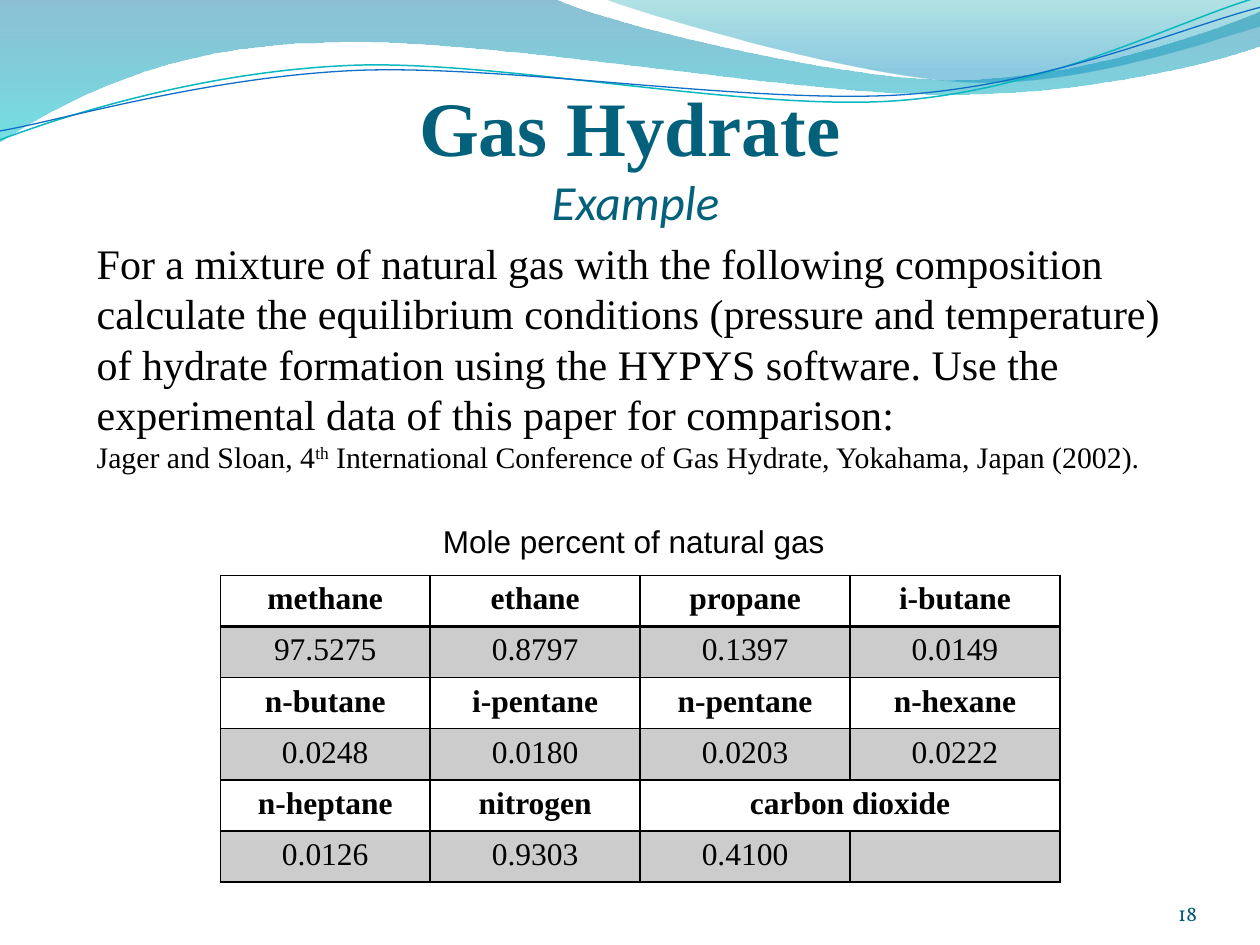
from collections import namedtuple
from itertools import product

from lxml.etree import SubElement
from pptx import Presentation
from pptx.dml.color import RGBColor
from pptx.enum.text import MSO_ANCHOR, MSO_AUTO_SIZE, PP_ALIGN
from pptx.oxml.ns import qn
from pptx.util import Cm, Pt

COLORS = {
    "black": "000000", "title": "04617B", "number": "045D75",
    "deep_blue": "0074A1", "aqua": "00C6CF", "teal": "00A1A9", "sky": "008BBF",
    "teal_line": "0AB8BF", "blue_line": "0F6FC6",
}
SERIF = "Times New Roman"
Box = namedtuple("Box", "left top width height")

# Outlines in cm: two numbers make a straight segment, six a Bezier curve
LARGE_WAVE = [
    (0, -0.03), (11.18, -0.03), (12.09, 0.43, 16.87, 1.6, 19.25, 1.6),
    (21.67, 1.6, 24.33, 0.66, 25.4, 0.23), (25.43, 0.91),
    (24.97, 1.12, 22.1, 1.93, 18.95, 1.9), (15.8, 1.9, 9.7, 0.71, 6.53, 0.86),
    (3.28, 0.89, 1.17, 2.11, -0.03, 2.87),
]
SMALL_WAVE = [
    (12.17, -0.03), (12.93, 0.28, 17.32, 1.57, 19.53, 1.65),
    (21.74, 1.75, 24.41, 0.81, 25.4, 0.53), (25.4, 0),
]
TEAL_CURVE = [
    (0, 2.82), (1.22, 2.36, 4.01, 1.45, 7.04, 1.32),
    (10.03, 1.19, 15.06, 2.26, 18.11, 2.03), (21.16, 1.8, 23.83, 0.38, 25.35, -0.05),
]
BLUE_CURVE = [
    (0, 2.64), (1.19, 2.44, 4.17, 1.55, 7.19, 1.42),
    (10.24, 1.3, 15.16, 2.11, 18.21, 1.91), (21.23, 1.7, 23.9, 0.53, 25.4, 0.15),
]

GASES = [
    ["methane", "ethane", "propane", "i-butane"],
    ["97.5275", "0.8797", "0.1397", "0.0149"],
    ["n-butane", "i-pentane", "n-pentane", "n-hexane"],
    ["0.0248", "0.0180", "0.0203", "0.0222"],
    ["n-heptane", "nitrogen", "carbon dioxide", ""],
    ["0.0126", "0.9303", "0.4100", ""],
]


def rgb(name):
    return RGBColor.from_string(COLORS[name])


def write(para, text, size=18, font=SERIF, color="black", bold=False,
          italic=False, align=None, raised=False):
    span = para.add_run()
    span.text = text
    span.font.size, span.font.name = Pt(size), font
    span.font.bold, span.font.italic = bold, italic
    span.font.color.rgb = rgb(color)
    if align is not None:
        para.alignment = align
    if raised:
        span.font._element.set("baseline", "30000")


def set_opacity(element, percents):
    for color, percent in zip(element.iter(qn("a:srgbClr")), percents):
        SubElement(color, qn("a:alpha")).set("val", str(percent * 1000))


def add_text_box(page, box, wrap=True):
    shape = page.shapes.add_textbox(*box)
    shape.text_frame.word_wrap = wrap
    return shape.text_frame


def bend_segments(shape, outline):
    """Turn each run of three lines that stands for a curve into a Bezier segment."""
    lines = iter(list(shape._element.iter(qn("a:lnTo"))))
    for segment in outline[1:]:
        first = next(lines)
        if len(segment) == 6:
            first.tag = qn("a:cubicBezTo")
            for _ in range(2):
                line = next(lines)
                first.append(line[0])
                line.getparent().remove(line)


def add_outline(page, box, outline, close):
    points = [(Cm(segment[i]), Cm(segment[i + 1]))
              for segment in outline for i in range(0, len(segment), 2)]
    builder = page.shapes.build_freeform(*points[0])
    builder.add_line_segments(points[1:], close=close)
    shape = builder.convert_to_shape(box.left, box.top)
    bend_segments(shape, outline)
    shape.shadow.inherit = False
    return shape


def add_waves(page, box):
    # Filled waves: colour, position and opacity of each gradient stop
    for outline, stops in (
        (LARGE_WAVE, [("deep_blue", 0, 45), ("aqua", 1, 55)]),
        (SMALL_WAVE, [("teal", 0, 30), ("sky", 0.8, 45)]),
    ):
        wave = add_outline(page, box, outline, close=True)
        wave.line.fill.background()
        wave.fill.gradient()
        wave.fill.gradient_angle = 270
        for stop, (color, position, _) in zip(wave.fill.gradient_stops, stops):
            stop.color.rgb, stop.position = rgb(color), position
        set_opacity(wave._element.spPr, [opacity for _, _, opacity in stops])
    # Thin curves
    for outline, color, width in ((TEAL_CURVE, "teal_line", 0.85),
                                  (BLUE_CURVE, "blue_line", 0.75)):
        curve = add_outline(page, box, outline, close=False)
        curve.fill.background()
        curve.line.color.rgb, curve.line.width = rgb(color), Pt(width)


def add_title(page, box):
    title = page.shapes.title
    title.left, title.top, title.width, title.height = box
    frame = title.text_frame
    frame.auto_size, frame.vertical_anchor = MSO_AUTO_SIZE.NONE, MSO_ANCHOR.TOP
    frame.margin_left = frame.margin_right = frame.margin_bottom = 0
    frame.margin_top = Cm(0.13)
    para = frame.paragraphs[0]
    write(para, "Gas Hydrate", size=44, color="title", bold=True, align=PP_ALIGN.CENTER)
    para.add_line_break()
    write(para, " Example", size=28, font="Calibri", color="title", italic=True)


def add_problem(page, box):
    frame = add_text_box(page, box)
    write(frame.paragraphs[0],
          "For a mixture of natural gas with the following composition calculate the "
          "equilibrium conditions (pressure and temperature) of hydrate formation using "
          "the HYPYS software. Use the experimental data of this paper for comparison:",
          size=24)
    citation = frame.add_paragraph()
    write(citation, "Jager and Sloan, 4", size=17)
    write(citation, "th", size=17, raised=True)
    write(citation, " International Conference of Gas Hydrate, Yokahama, Japan (2002).",
          size=17)


def set_borders(cell, widths):
    properties = cell._tc.get_or_add_tcPr()
    for index, (side, width) in enumerate(zip("LRTB", widths)):
        line = SubElement(properties, qn(f"a:ln{side}"), w=str(Pt(width)))
        fill = SubElement(line, qn("a:solidFill"))
        SubElement(fill, qn("a:srgbClr"), val=COLORS["black"])
        properties.insert(index, line)


def add_gas_table(page, box):
    rows, columns = len(GASES), len(GASES[0])
    table = page.shapes.add_table(rows, columns, *box).table
    table.horz_banding = False
    for row, column in product(range(rows), range(columns)):
        cell = table.cell(row, column)
        is_name = row % 2 == 0
        if GASES[row][column]:
            write(cell.text_frame.paragraphs[0], GASES[row][column],
                  bold=is_name, align=PP_ALIGN.CENTER)
        if is_name:
            cell.fill.background()
        else:
            cell.fill.solid()
            cell.fill.fore_color.rgb = rgb("black")
            set_opacity(cell._tc.tcPr, [20])
        set_borders(cell, (1, 1, 2 if row == 1 else 1, 2 if row == 0 else 1))
    table.cell(4, 2).merge(table.cell(4, 3))


def add_caption(page, box):
    frame = add_text_box(page, box, wrap=False)
    write(frame.paragraphs[0], "Mole percent of natural gas", font="Arial")


def add_page_number(page, box):
    frame = add_text_box(page, box)
    frame.margin_left = frame.margin_right = frame.margin_top = frame.margin_bottom = 0
    frame.vertical_anchor = MSO_ANCHOR.BOTTOM
    write(frame.paragraphs[0], "18", size=12, font="Vollkorn", color="number",
          align=PP_ALIGN.RIGHT)


def main():
    deck = Presentation()
    deck.slide_width, deck.slide_height = Cm(25.4), Cm(19.05)
    page = deck.slides.add_slide(deck.slide_layouts[5])
    for build, lengths in (
        (add_waves, (0, 0, 25.4, 2.87)),
        (add_title, (1.27, 1.47, 22.86, 2.97)),
        (add_page_number, (22.02, 17.65, 2.11, 1.02)),
        (add_problem, (1.7, 4.66, 22.23, 5.13)),
        (add_gas_table, (4.44, 11.6, 16.93, 6.18)),
        (add_caption, (8.68, 10.4, 8.28, 1.02)),
    ):
        build(page, Box(*map(Cm, lengths)))
    deck.save("out.pptx")


if __name__ == "__main__":
    main()
